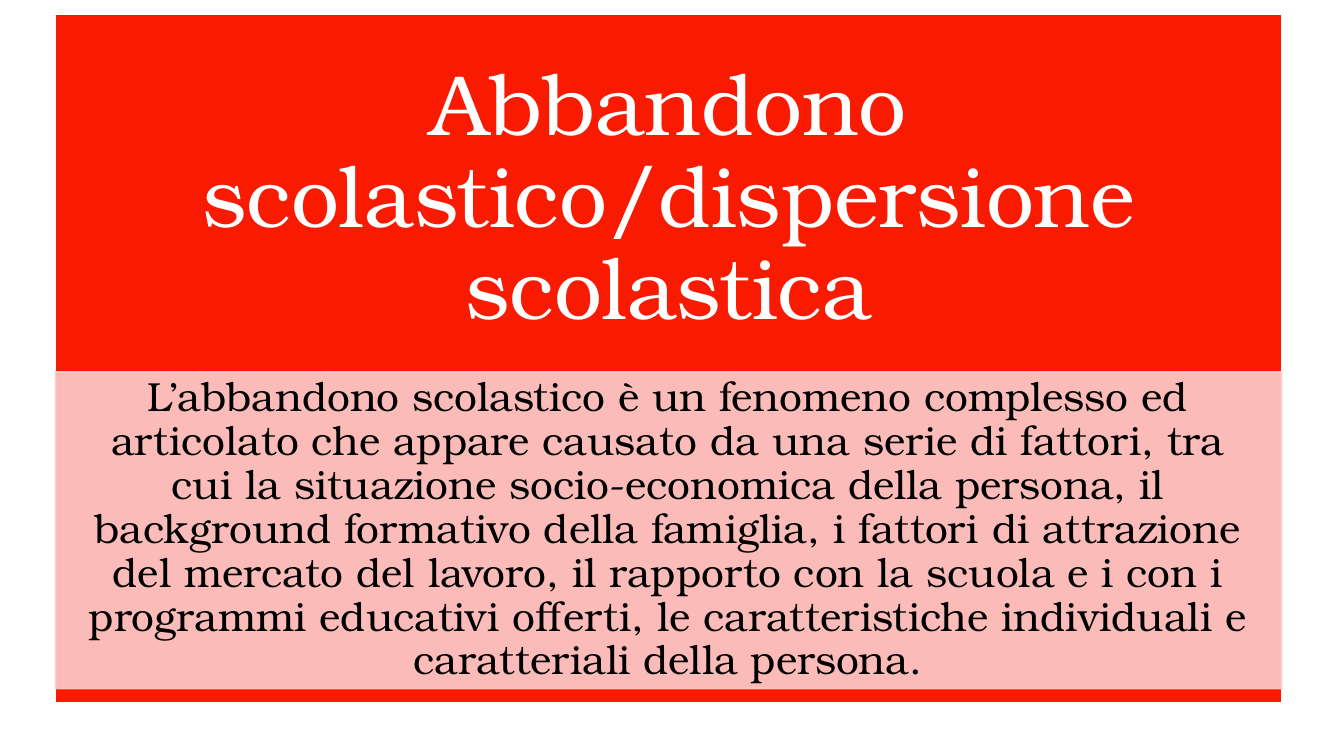
import pptx
import pptx.dml.color
import pptx.enum.shapes
import pptx.enum.text
import pptx.oxml.ns
import pptx.util
from lxml import etree

Inches = pptx.util.Inches
FONT = "TeX Gyre Bonum"
COLOURS = {"red": "F81B02", "pink": "FCCDCC", "white": "FFFFFF", "black": "000000"}
TITLE = "Abbandono scolastico/dispersione scolastica"
DEFINITION = (
    "L’abbandono scolastico è un fenomeno complesso ed articolato che appare "
    "causato da una serie di fattori, tra cui la situazione socio-economica della "
    "persona, il background formativo della famiglia, i fattori di attrazione del "
    "mercato del lavoro, il rapporto con la scuola e i con i programmi educativi "
    "offerti, le caratteristiche individuali e caratteriali della persona."
)


def colour(name):
    return pptx.dml.color.RGBColor.from_string(COLOURS[name])


def add_panel(page, box, fill, line, opacity=100):
    """Add a rectangle in the box (left, top, width, height in inches)."""
    panel = page.shapes.add_shape(
        pptx.enum.shapes.MSO_SHAPE.RECTANGLE, *map(Inches, box))
    panel.shadow.inherit = False
    panel.fill.solid()
    panel.fill.fore_color.rgb = colour(fill)
    panel.line.color.rgb = colour(line)
    panel.line.width = pptx.util.Pt(1.25)
    if opacity < 100:
        for tone in panel._element.spPr.iter(pptx.oxml.ns.qn("a:srgbClr")):
            etree.SubElement(tone, pptx.oxml.ns.qn("a:alpha"), val=str(opacity * 1000))
    return panel


def write_text(shape, text, size, tone, side_inset, end_inset):
    frame = shape.text_frame
    frame.word_wrap = True
    frame.auto_size = pptx.enum.text.MSO_AUTO_SIZE.NONE
    frame.vertical_anchor = pptx.enum.text.MSO_ANCHOR.MIDDLE
    frame.margin_left = frame.margin_right = Inches(side_inset)
    frame.margin_top = frame.margin_bottom = Inches(end_inset)
    para = frame.paragraphs[0]
    para.text = text
    para.alignment = pptx.enum.text.PP_ALIGN.CENTER
    para.line_spacing = 0.9
    para.space_before = pptx.util.Pt(0)
    para.font.name = FONT
    para.font.size = pptx.util.Pt(size)
    para.font.color.rgb = colour(tone)


def add_heading(page, box):
    """Red block with the slide title in its upper part."""
    left, top, width, height = box
    block = add_panel(page, box, "red", "white")
    title = page.shapes.title
    title.left, title.top = Inches(left), Inches(top)
    title.width, title.height = Inches(width), Inches(height * 0.54)
    write_text(title, TITLE, 61, "white", 0.47, 0.47)
    # Bring the title in front of its block
    block._element.addnext(title._element)


def add_definition(page, box):
    """Translucent pink band with the definition."""
    band = add_panel(page, box, "pink", "pink", opacity=90)
    write_text(band, DEFINITION, 29, "black", 0.23, 0.04)


def main():
    deck = pptx.Presentation()
    deck.slide_width, deck.slide_height = Inches(13.33), Inches(7.5)
    page = deck.slides.add_slide(deck.slide_layouts.get_by_name("Title Only"))
    left, width = 0.55, 12.16
    add_heading(page, (left, 0.14, width, 6.83))
    add_definition(page, (left, 3.69, width, 3.14))
    deck.save("out.pptx")


if __name__ == "__main__":
    main()
